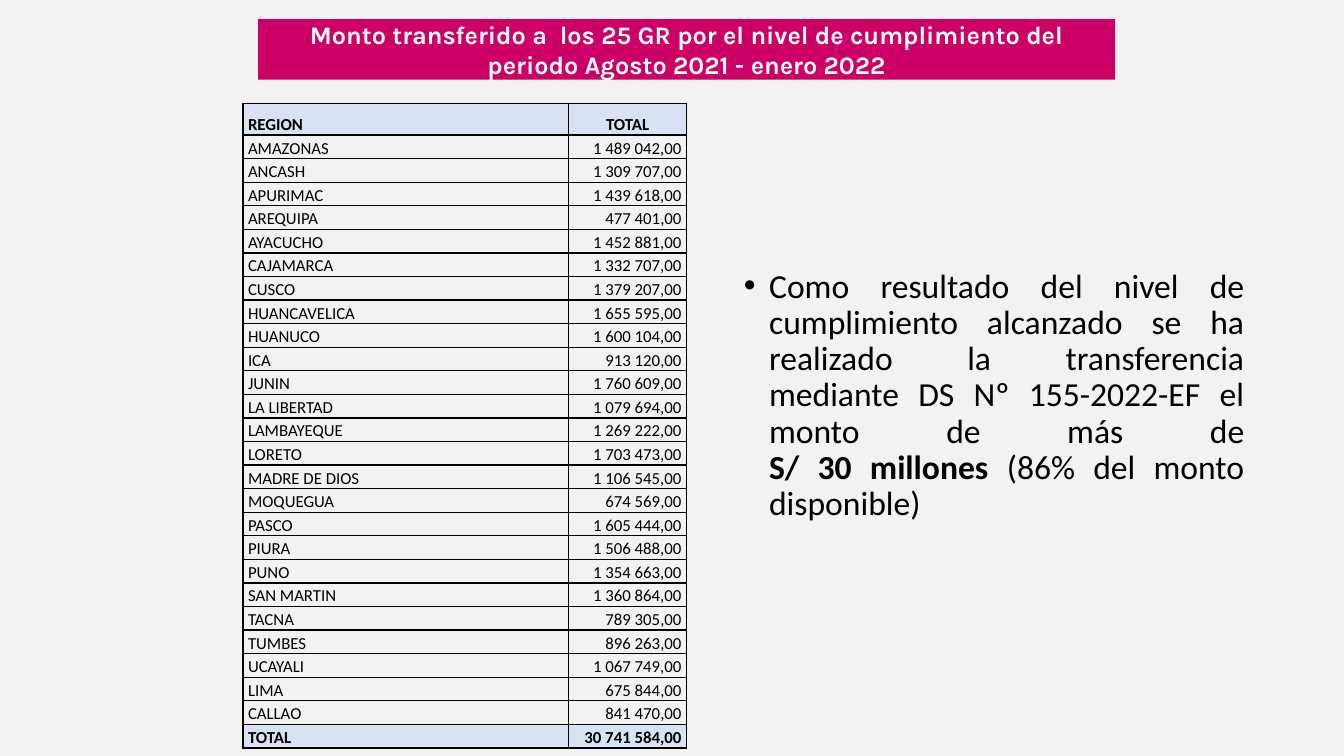
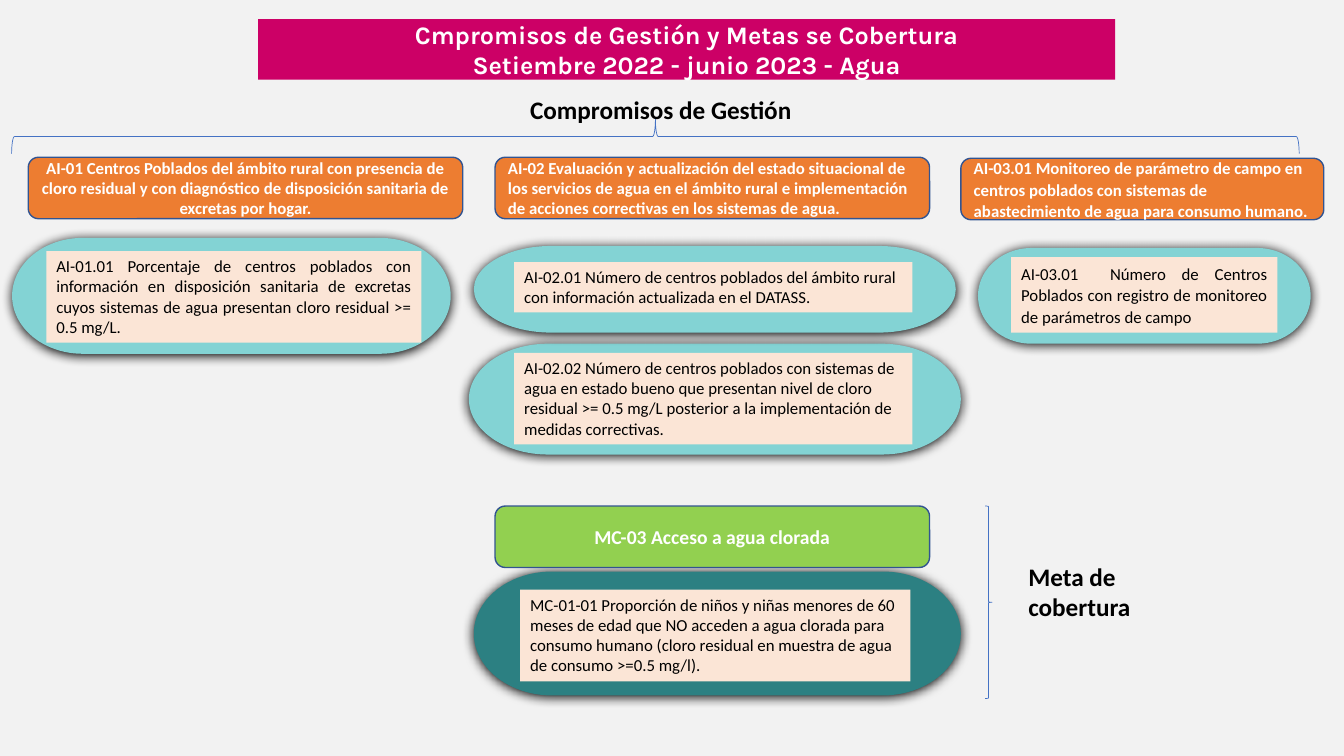
import pptx
import pptx.util
import pptx.dml.color
import pptx.enum.shapes
import pptx.enum.text
import pptx.oxml
import pptx.oxml.ns

Inches = pptx.util.Inches
Pt = pptx.util.Pt
RGBColor = pptx.dml.color.RGBColor
SHAPE = pptx.enum.shapes.MSO_SHAPE
ALIGN = pptx.enum.text.PP_ALIGN
ANCHOR = pptx.enum.text.MSO_ANCHOR

BACKGROUND = RGBColor(0xF2, 0xF2, 0xF2)
MAGENTA = RGBColor(0xCC, 0x00, 0x66)
WHITE = RGBColor(0xFF, 0xFF, 0xFF)
BLACK = RGBColor(0x00, 0x00, 0x00)
PALE_BLUE = RGBColor(0xD9, 0xE2, 0xF3)
ORANGE = RGBColor(0xED, 0x7D, 0x31)
GREEN = RGBColor(0x92, 0xD0, 0x50)
NAVY = RGBColor(0x32, 0x54, 0x91)
BLUE = RGBColor(0x44, 0x72, 0xC4)
AQUA = RGBColor(0x83, 0xD3, 0xD4)
TEAL = RGBColor(0x2C, 0x80, 0x82)
PEACH = RGBColor(0xFB, 0xE5, 0xD6)

TRANSFER_TITLE = "Monto transferido a  los 25 GR por el nivel de cumplimiento del periodo Agosto 2021 - enero 2022"
AMOUNTS = [
    ("REGION", "TOTAL"),
    ("AMAZONAS", "1 489 042,00"),
    ("ANCASH", "1 309 707,00"),
    ("APURIMAC", "1 439 618,00"),
    ("AREQUIPA", "477 401,00"),
    ("AYACUCHO", "1 452 881,00"),
    ("CAJAMARCA", "1 332 707,00"),
    ("CUSCO", "1 379 207,00"),
    ("HUANCAVELICA", "1 655 595,00"),
    ("HUANUCO", "1 600 104,00"),
    ("ICA", "913 120,00"),
    ("JUNIN", "1 760 609,00"),
    ("LA LIBERTAD", "1 079 694,00"),
    ("LAMBAYEQUE", "1 269 222,00"),
    ("LORETO", "1 703 473,00"),
    ("MADRE DE DIOS", "1 106 545,00"),
    ("MOQUEGUA", "674 569,00"),
    ("PASCO", "1 605 444,00"),
    ("PIURA", "1 506 488,00"),
    ("PUNO", "1 354 663,00"),
    ("SAN MARTIN", "1 360 864,00"),
    ("TACNA", "789 305,00"),
    ("TUMBES", "896 263,00"),
    ("UCAYALI", "1 067 749,00"),
    ("LIMA", "675 844,00"),
    ("CALLAO", "841 470,00"),
    ("TOTAL", "30 741 584,00"),
]
RESULT = [
    ("Como resultado del nivel de cumplimiento alcanzado se ha realizado la transferencia "
     "mediante DS Nº 155-2022-EF el monto de más de", False),
    ("S/ 30 millones ", True),
    ("(86% del monto disponible)", False),
]

GOALS_TITLE = "Cmpromisos de Gestión y Metas se Cobertura\nSetiembre 2022 - junio 2023 - Agua"
INDICATORS = [
    ("AI-02.02 Número de centros poblados con sistemas de agua en estado bueno que presentan nivel de "
     "cloro residual >= 0.5 mg/L posterior a la implementación de medidas correctivas.",
     AQUA, (4.65, 3.41, 4.88, 1.1), (5.1, 3.5, 3.95, 0.91), ALIGN.LEFT, 1),
    ("AI-03.01  Número de Centros Poblados con registro de monitoreo de parámetros de campo",
     AQUA, (9.7, 2.46, 3.3, 0.95), (10.03, 2.55, 2.64, 0.75), ALIGN.JUSTIFY, 1.07),
    ("AI-02.01 Número de centros poblados del ámbito rural con información actualizada en el DATASS.",
     AQUA, (4.7, 2.44, 4.78, 0.86), (5.1, 2.6, 3.95, 0.5), ALIGN.LEFT, 1),
    ("AI-01.01 Porcentaje de centros poblados con información en disposición sanitaria de excretas "
     "cuyos sistemas de agua presentan cloro residual >= 0.5 mg/L.",
     AQUA, (0.12, 2.36, 4.35, 1.15), (0.46, 2.49, 3.72, 0.91), ALIGN.JUSTIFY, 1),
    ("MC-01-01 Proporción de niños y niñas menores de 60 meses de edad que NO acceden a agua clorada "
     "para consumo humano (cloro residual en muestra de agua de consumo >=0.5 mg/l).",
     TEAL, (4.7, 5.67, 4.83, 1.23), (5.16, 5.85, 3.87, 0.91), ALIGN.LEFT, 1),
]
HEADINGS = [
    ("AI-01 Centros Poblados del ámbito rural con presencia de cloro residual y con diagnóstico de "
     "disposición sanitaria de excretas por hogar.",
     ORANGE, (0.28, 1.56, 4.31, 0.61), 12, ALIGN.CENTER, 1),
    ("AI-02 Evaluación y actualización del estado situacional de los servicios de agua en el ámbito "
     "rural e implementación de acciones correctivas en los sistemas de agua.",
     ORANGE, (4.91, 1.56, 4.31, 0.61), 12, ALIGN.LEFT, 1),
    ("AI-03.01 Monitoreo de parámetro de campo en centros poblados con sistemas de  abastecimiento "
     "de agua para consumo humano.",
     ORANGE, (9.53, 1.57, 3.6, 0.61), 12, ALIGN.LEFT, 1.07),
    ("MC-03 Acceso a agua clorada", GREEN, (4.91, 5.02, 4.31, 0.61), 14, ALIGN.CENTER, 1),
]
BRACES = [
    (SHAPE.LEFT_BRACE, (6.33, -5.03, 0.34, 12.77), 90),
    (SHAPE.RIGHT_BRACE, (9.77, 5.02, 0.07, 1.91), 0),
]
LABELS = [
    ("Compromisos de Gestión", (5.16, 0.89, 3, 0.41)),
    ("Meta de cobertura", (10.1, 5.52, 1.25, 0.71)),
]


def inches(box):
    return [Inches(v) for v in box]


def style_font(font, size, color=BLACK, bold=False, name="Calibri"):
    font.name, font.size, font.bold = name, Pt(size), bold
    font.color.rgb = color


def write(tf, text, size, color=BLACK, bold=False, align=ALIGN.LEFT, spacing=1,
          anchor=ANCHOR.TOP, name="Calibri"):
    tf.word_wrap = True
    tf.vertical_anchor = anchor
    tf.text = text
    for p in tf.paragraphs:
        p.alignment, p.line_spacing = align, spacing
        for r in p.runs:
            style_font(r.font, size, color, bold, name)


def add_shape(s, kind, box, fill=None, line=None, width=1):
    sp = s.shapes.add_shape(kind, *inches(box))
    sp.shadow.inherit = False
    if fill is None:
        sp.fill.background()
    else:
        sp.fill.solid()
        sp.fill.fore_color.rgb = fill
    if line is None:
        sp.line.fill.background()
    else:
        sp.line.color.rgb = line
        sp.line.width = Pt(width)
    return sp


def add_pill(s, box, fill):
    sp = add_shape(s, SHAPE.FLOWCHART_TERMINATOR, box, fill)
    effects = sp._element.spPr.find(pptx.oxml.ns.qn("a:effectLst"))
    effects.append(pptx.oxml.parse_xml(
        f'<a:outerShdw {pptx.oxml.ns.nsdecls("a")} blurRad="{Pt(8.5)}" dist="{Pt(1)}" '
        'dir="5400000" algn="t" rotWithShape="0"><a:srgbClr val="000000"/></a:outerShdw>'))


def add_titled_slide(prs, title):
    s = prs.slides.add_slide(prs.slide_layouts[6])
    sp = add_shape(s, SHAPE.RECTANGLE, (2.56, 0.19, 8.5, 0.6), MAGENTA)
    write(sp.text_frame, title, 18, WHITE, True, ALIGN.CENTER, anchor=ANCHOR.MIDDLE, name="Karla")
    return s


def style_cell(cell, text, bold, align, fill):
    cell.margin_left = cell.margin_right = Inches(0.05)
    cell.margin_top = cell.margin_bottom = 0
    write(cell.text_frame, text, 12, BLACK, bold, align, 1.15)
    cell.vertical_anchor = ANCHOR.BOTTOM
    tcPr = cell._tc.get_or_add_tcPr()
    for side in ("lnL", "lnR", "lnT", "lnB"):
        tcPr.append(pptx.oxml.parse_xml(
            f'<a:{side} {pptx.oxml.ns.nsdecls("a")} w="{Pt(1)}"><a:solidFill>'
            f'<a:srgbClr val="{BLACK}"/></a:solidFill></a:{side}>'))
    if fill is None:
        cell.fill.background()
    else:
        cell.fill.solid()
        cell.fill.fore_color.rgb = fill


def add_amounts(s):
    last = len(AMOUNTS) - 1
    table = s.shapes.add_table(len(AMOUNTS), 2, *inches((2.41, 1.03, 4.4, 6.29))).table
    table.first_row = table.horz_banding = False
    for column, width in zip(table.columns, (3.23, 1.17)):
        column.width = Inches(width)
    for i, row in enumerate(AMOUNTS):
        table.rows[i].height = Inches(0.31 if i == 0 else 0.23)
        strong = i in (0, last)
        amount_align = ALIGN.CENTER if i == 0 else ALIGN.RIGHT
        for j, align in enumerate((ALIGN.LEFT, amount_align)):
            style_cell(table.cell(i, j), row[j], strong, align, PALE_BLUE if strong else None)


def add_result(s):
    tf = s.shapes.add_textbox(*inches((7.28, 2.62, 5.16, 2.84))).text_frame
    tf.word_wrap = True
    p = tf.paragraphs[0]
    p.alignment, p.line_spacing = ALIGN.JUSTIFY, 0.9
    pPr = p._p.get_or_add_pPr()
    pPr.set("marL", str(Inches(0.25)))
    pPr.set("indent", str(-Inches(0.25)))
    ns = pptx.oxml.ns.nsdecls("a")
    pPr.append(pptx.oxml.parse_xml(f'<a:buFont {ns} typeface="Arial"/>'))
    pPr.append(pptx.oxml.parse_xml(f'<a:buChar {ns} char="•"/>'))
    for i, (text, bold) in enumerate(RESULT):
        if i == 1:
            p.add_line_break()
        r = p.add_run()
        r.text = text
        style_font(r.font, 24, bold=bold)


def add_goals(s):
    for text, fill, pill, panel, align, spacing in INDICATORS:
        add_pill(s, pill, fill)
        sp = add_shape(s, SHAPE.RECTANGLE, panel, PEACH)
        write(sp.text_frame, text, 12, align=align, spacing=spacing)
    for text, fill, box, size, align, spacing in HEADINGS:
        sp = add_shape(s, SHAPE.ROUNDED_RECTANGLE, box, fill, NAVY)
        write(sp.text_frame, text, size, WHITE, True, align, spacing, ANCHOR.MIDDLE)
    for kind, box, rotation in BRACES:
        add_shape(s, kind, box, line=BLUE, width=0.5).rotation = rotation
    for text, box in LABELS:
        write(s.shapes.add_textbox(*inches(box)).text_frame, text, 18, bold=True)


def main():
    prs = pptx.Presentation()
    prs.slide_width, prs.slide_height = Inches(13.33), Inches(7.5)
    fill = prs.slide_master.background.fill
    fill.solid()
    fill.fore_color.rgb = BACKGROUND
    s = add_titled_slide(prs, TRANSFER_TITLE)
    add_amounts(s)
    add_result(s)
    add_goals(add_titled_slide(prs, GOALS_TITLE))
    prs.save("out.pptx")


if __name__ == "__main__":
    main()
